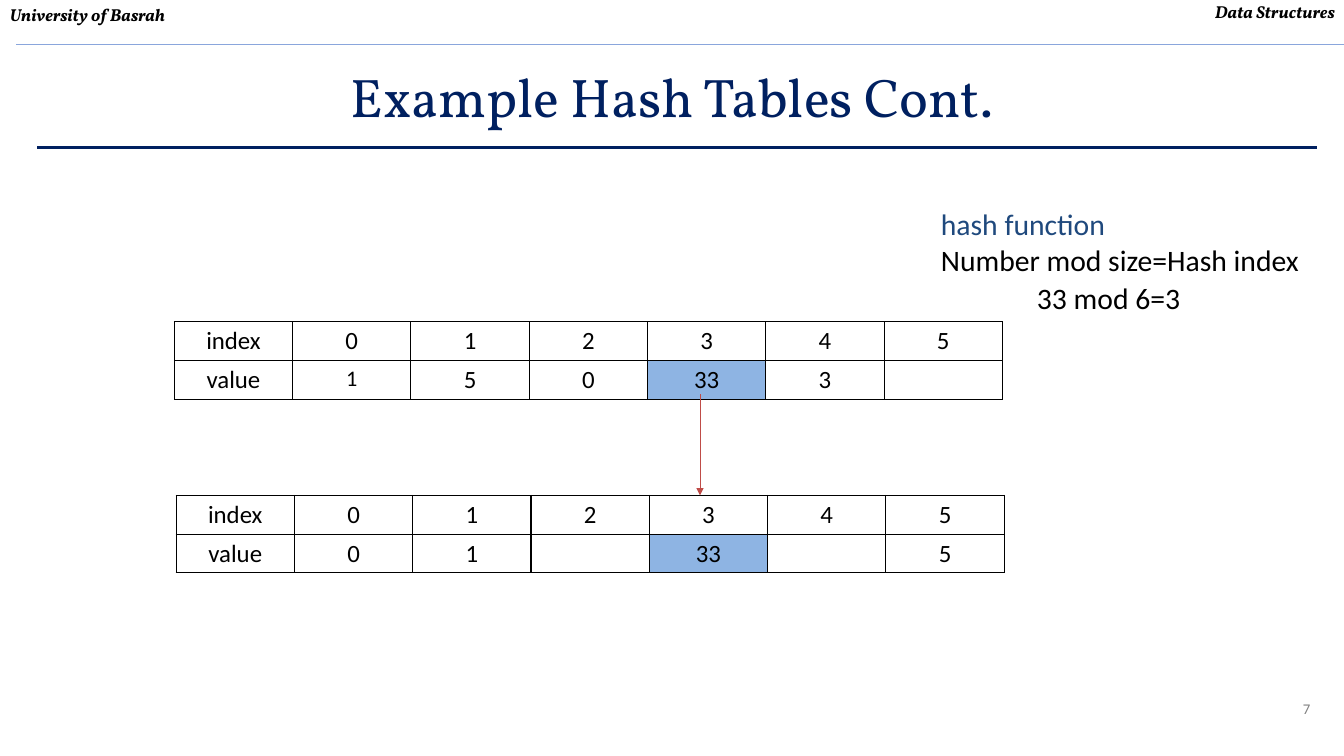
from lxml import etree
from pptx import Presentation, util as u
from pptx.dml.color import RGBColor
from pptx.enum import shapes, text
from pptx.oxml import parse_xml
from pptx.oxml.ns import nsdecls, qn

W, H = 15.11, 8.5
NAVY, BLACK, BLUE, WHITE = "002060", "000000", "8EB4E3", "FFFFFF"
LEFT, MID, RIGHT = text.PP_ALIGN.LEFT, text.PP_ALIGN.CENTER, text.PP_ALIGN.RIGHT

prs = Presentation()
prs.slide_width, prs.slide_height = u.Inches(W), u.Inches(H)
slide = prs.slides.add_slide(prs.slide_layouts[6])
hue = RGBColor.from_string


def style(para, words, size, color, face="Calibri", align=LEFT, bold=False):
    para.text, para.alignment = words, align
    font = para.font
    font.size, font.name, font.color.rgb = u.Pt(size), face, hue(color)
    font.bold = font.italic = bold


def rule(x1, y1, x2, y2, color, width):
    line = slide.shapes.add_connector(
        shapes.MSO_CONNECTOR.STRAIGHT, *map(u.Inches, (x1, y1, x2, y2)))
    line.line.color.rgb, line.line.width = hue(color), u.Pt(width)
    etree.SubElement(line._element.spPr, qn("a:effectLst"))
    return line


# Header and title rules
rule(0.18, 0.5, W, 0.5, "8AA6DC", 1.5)
rule(0.42, 1.66, W - 0.3, 1.66, NAVY, 2)

# Header, title, hash function and page number: place, lines, look
boxes = [
    ((0, -0.03, W, 0.34), [("Data Structures", BLACK)], (14, "Vollkorn", RIGHT, True)),
    ((0.01, 0, W / 2, 0.34), [("University of Basrah", BLACK)], (14, "Vollkorn", LEFT, True)),
    ((0, 0.5, W, 1.15), [("Example Hash Tables Cont.", NAVY)], (44, "Vollkorn", MID, False)),
    ((10.48, 2.27, 4.27, 0.91),
     [("hash function", "1F497D"), ("Number mod size=Hash index", BLACK)],
     (24, "Calibri", LEFT, False)),
    ((11.56, 3.1, 3.19, 0.5), [("33 mod 6=3", BLACK)], (24, "Calibri", LEFT, False)),
    ((13.16, 7.82, 1.67, 0.7), [("7", "808080")], (12, "Calibri", RIGHT, False)),
]
for place, lines, (size, face, align, bold) in boxes:
    frame = slide.shapes.add_textbox(*map(u.Inches, place)).text_frame
    frame.word_wrap = True
    if size == 44:
        frame.vertical_anchor = text.MSO_ANCHOR.MIDDLE
    for i, (words, color) in enumerate(lines):
        para = frame.add_paragraph() if i else frame.paragraphs[0]
        style(para, words, size, color, face, align, bold)

# Tables before and after hashing
COL, ROW = 1.33, 0.41
index = ["index", *"012345"]
tables = [
    (1.96, 3.62, ["value", "1", "5", "0", "33", "3", ""]),
    (1.98, 5.57, ["value", "0", "1", "", "33", "", "5"]),
]
for x, y, values in tables:
    grid = slide.shapes.add_table(
        2, 7, *map(u.Inches, (x, y, 7 * COL, 2 * ROW))).table
    grid.first_row = grid.horz_banding = False
    for r, row in enumerate((index, values)):
        for c, words in enumerate(row):
            cell = grid.cell(r, c)
            small = y < 5 and (r, c) == (1, 1)
            style(cell.text_frame.paragraphs[0], words, 18 if small else 20.1,
                  BLACK, align=MID)
            for side in "LRTB":
                cell._tc.get_or_add_tcPr().append(parse_xml(
                    f'<a:ln{side} w="12700" {nsdecls("a")}><a:solidFill>'
                    f'<a:srgbClr val="{BLACK}"/></a:solidFill></a:ln{side}>'))
            cell.fill.solid()
            cell.fill.fore_color.rgb = hue(BLUE if words == "33" else WHITE)

# Arrow from the value to its hash index
arrow = rule(7.87, 4.43, 7.87, 5.57, "BF4C48", 0.75)
etree.SubElement(arrow.line._get_or_add_ln(), qn("a:tailEnd"), type="triangle")

prs.save("out.pptx")
